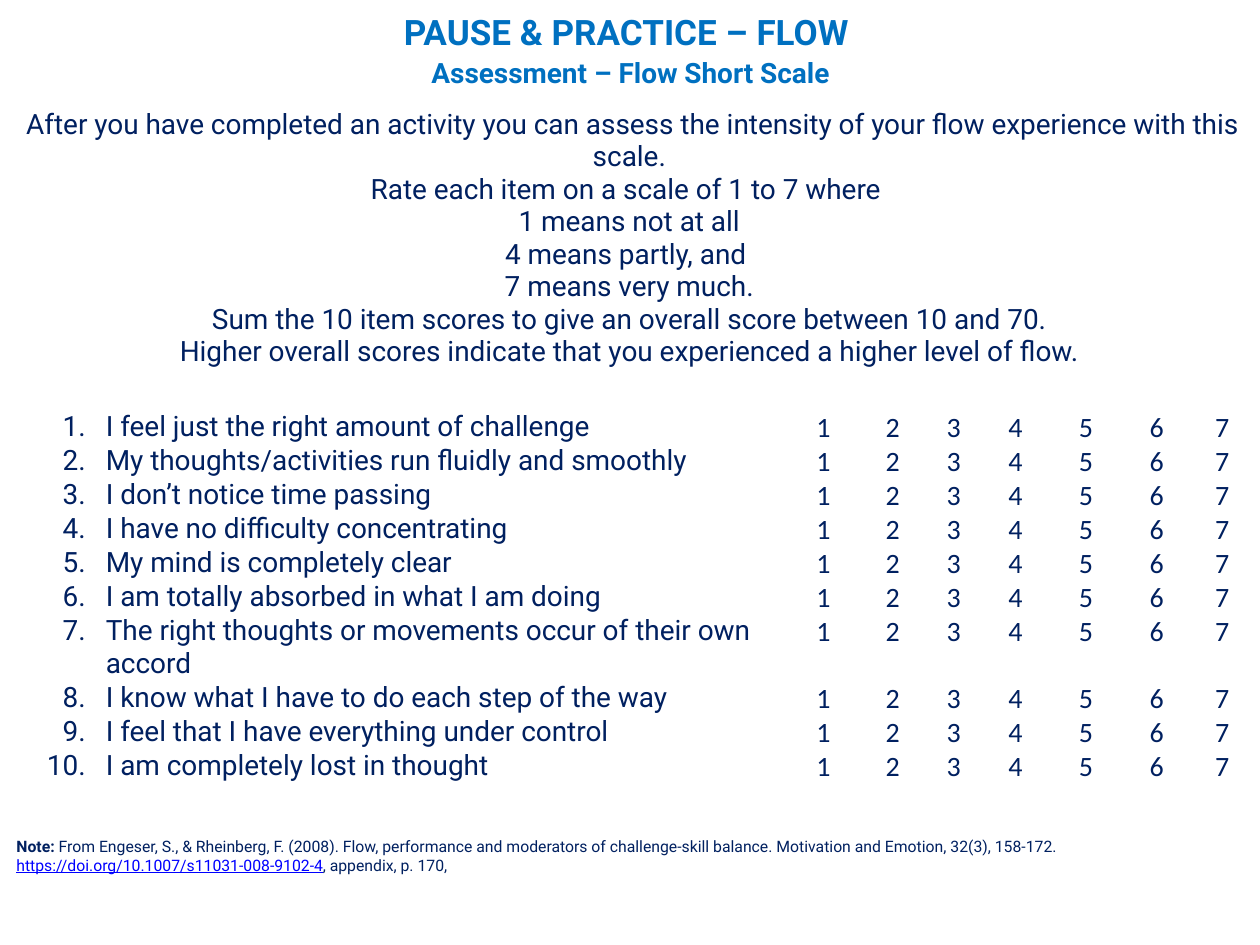
import pptx
import pptx.dml.color
import pptx.enum.text
import pptx.util

Inches = pptx.util.Inches
Pt = pptx.util.Pt
ALIGN = pptx.enum.text.PP_ALIGN
BLUE = pptx.dml.color.RGBColor(0x00, 0x70, 0xC0)
NAVY = pptx.dml.color.RGBColor(0x00, 0x20, 0x60)
LINK = pptx.dml.color.RGBColor(0x00, 0x00, 0xFF)

TITLE = [("PAUSE & PRACTICE – FLOW ", 20), ("Assessment – Flow Short Scale", 16)]
INTRO = [
    " After you have completed an activity you can assess the intensity of your flow experience with this scale.",
    "Rate each item on a scale of 1 to 7 where ",
    "1 means not at all",
    "4 means partly, and ",
    "7 means very much.",
    " Sum the 10 item scores to give an overall score between 10 and 70. \v"
    "Higher overall scores indicate that you experienced a higher level of flow.",
]
ITEMS = [
    "I feel just the right amount of challenge",
    "My thoughts/activities run fluidly and smoothly",
    "I don’t notice time passing",
    "I have no difficulty concentrating",
    "My mind is completely clear",
    "I am totally absorbed in what I am doing",
    "The right thoughts or movements occur of their own accord",
    "I know what I have to do each step of the way",
    "I feel that I have everything under control",
    "I am completely lost in thought",
]
# Text, bold, underline, colour
NOTE = [
    ("Note: ", True, False, NAVY),
    ("From Engeser, S., & Rheinberg, F. (2008). Flow, performance and moderators of "
     "challenge-skill balance. Motivation and Emotion, 32(3), 158-172. ", False, False, NAVY),
    ("https://doi.org/10.1007/s11031-008-9102-4", False, True, LINK),
    (", appendix, p. 170,", False, False, NAVY),
]
COLS = [0.71, 5.5, 0.55, 0.55, 0.42, 0.56, 0.56, 0.56, 0.48]
ROWS = [2.4] + [0.27] * 6 + [0.53] + [0.27] * 2 + [0.4, 0.6]


def style(para, size, color, align=ALIGN.LEFT, face="Roboto", bold=False):
    para.alignment = align
    font = para.font
    font.size, font.name, font.bold = Pt(size), face, bold
    font.color.rgb = color


def add_title(slide, left, top, width, height):
    box = slide.shapes.add_textbox(Inches(left), Inches(top), Inches(width), Inches(height))
    frame = box.text_frame
    frame.word_wrap = True
    frame.text = "\n".join(text for text, size in TITLE)
    for para, (text, size) in zip(frame.paragraphs, TITLE):
        style(para, size, BLUE, ALIGN.CENTER, bold=True)
        para.line_spacing = 1.1


def fill_intro(cell):
    cell.text = "\n".join(INTRO)
    for para in cell.text_frame.paragraphs:
        style(para, 16, NAVY, ALIGN.CENTER)


def fill_item(cells, num, item):
    texts = [f"{num}.", item] + [str(score) for score in range(1, 8)]
    aligns = [ALIGN.RIGHT, ALIGN.LEFT] + [ALIGN.CENTER] * 7
    faces = ["Roboto"] * 2 + ["Calibri"] * 7
    for cell, text, align, face in zip(cells, texts, aligns, faces):
        cell.text = text
        para = cell.text_frame.paragraphs[0]
        style(para, 16, NAVY, align, face)
        para.space_before = para.space_after = Pt(5)


def fill_note(cell):
    cell.margin_top = Inches(0.3)
    para = cell.text_frame.paragraphs[0]
    para.font.size, para.font.name = Pt(9), "Roboto"
    for text, bold, under, color in NOTE:
        run = para.add_run()
        run.text = text
        run.font.bold, run.font.underline = bold, under
        run.font.color.rgb = color


def add_scale(slide, left, top, width, height):
    frame = slide.shapes.add_table(len(ROWS), len(COLS), Inches(left), Inches(top),
                                   Inches(width), Inches(height))
    table = frame.table
    table.first_row = table.horz_banding = False
    for col, size in zip(table.columns, COLS):
        col.width = Inches(size)
    for row, size in zip(table.rows, ROWS):
        row.height = Inches(size)
    for cell in table.iter_cells():
        cell.fill.background()
        cell.margin_left = cell.margin_right = Inches(0.08)
        cell.margin_top = cell.margin_bottom = 0

    # Full-width first and last rows
    last_row, last_col = len(ROWS) - 1, len(COLS) - 1
    for row in (0, last_row):
        table.cell(row, 0).merge(table.cell(row, last_col))
    fill_intro(table.cell(0, 0))
    fill_note(table.cell(last_row, 0))

    # One row for each rated item
    for num, item in enumerate(ITEMS, 1):
        fill_item(table.rows[num].cells, num, item)


def main():
    deck = pptx.Presentation()
    deck.slide_width, deck.slide_height = Inches(10), Inches(7.5)
    slide = deck.slides.add_slide(deck.slide_layouts[6])
    add_title(slide, 1.93, 0, 6.15, 0.71)
    add_scale(slide, 0.05, 0.86, 9.9, 6.07)
    deck.save("out.pptx")


if __name__ == "__main__":
    main()
